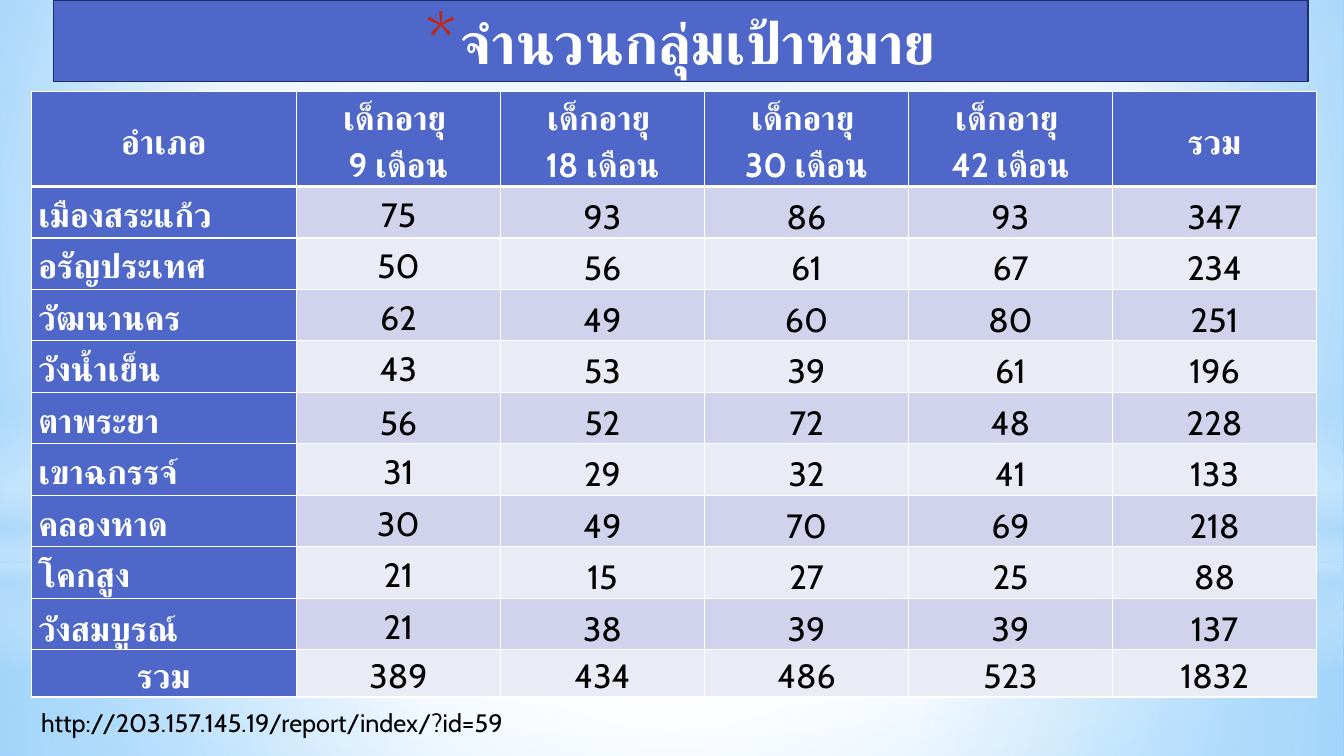
from lxml import etree
from pptx import Presentation
from pptx.dml.color import RGBColor
from pptx.enum.shapes import MSO_SHAPE
from pptx.enum.text import MSO_ANCHOR, PP_ALIGN
from pptx.oxml import parse_xml
from pptx.oxml.ns import nsdecls, qn
from pptx.util import Inches, Pt

RECT, OVAL = MSO_SHAPE.RECTANGLE, MSO_SHAPE.OVAL
MIDDLE, BOTTOM = MSO_ANCHOR.MIDDLE, MSO_ANCHOR.BOTTOM
LEFT, CENTER = PP_ALIGN.LEFT, PP_ALIGN.CENTER

FONT = "Cabin"
WHITE = RGBColor(0xFF, 0xFF, 0xFF)
BLACK = RGBColor(0, 0, 0)
BLUE = RGBColor(0x4E, 0x67, 0xC8)
NAVY = RGBColor(0x1F, 0x2E, 0x69)
RED = RGBColor(0xC3, 0x26, 0x0C)
BAND_DARK = RGBColor(0xD0, 0xD3, 0xEB)
BAND_LIGHT = RGBColor(0xE9, 0xEB, 0xF5)
SKY = RGBColor(0xB4, 0xDC, 0xFA)
SKY_PALE = RGBColor(0x9E, 0xD5, 0xFF)
SKY_DEEP = RGBColor(0x5B, 0xB9, 0xFF)

WIDTH, HEIGHT = 13.33, 7.5
TITLE = "จำนวนกลุ่มเป้าหมาย"
SOURCE = "http://203.157.145.19/report/index/?id=59"
TOTAL = "รวม"
AGES = (9, 18, 30, 42)
HEADER = ["อำเภอ", *(f"เด็กอายุ \n{age} เดือน" for age in AGES), TOTAL]
DISTRICTS = [
    ("เมืองสระแก้ว", 75, 93, 86, 93, 347),
    ("อรัญประเทศ", 50, 56, 61, 67, 234),
    ("วัฒนานคร", 62, 49, 60, 80, 251),
    ("วังน้ำเย็น", 43, 53, 39, 61, 196),
    ("ตาพระยา", 56, 52, 72, 48, 228),
    ("เขาฉกรรจ์", 31, 29, 32, 41, 133),
    ("คลองหาด", 30, 49, 70, 69, 218),
    ("โคกสูง", 21, 15, 27, 25, 88),
    ("วังสมบูรณ์", 21, 38, 39, 39, 137),
]
TOTALS = (TOTAL, 389, 434, 486, 523, 1832)
ROWS = [HEADER, *DISTRICTS, TOTALS]
LAST = len(ROWS) - 1
COLUMN_WIDTHS = [2.63] + [2.024] * 5
ROW_HEIGHTS = [0.94] + [0.511] * len(DISTRICTS) + [0.47]
LOW_CELLS = {(5, 1), (9, 0), (LAST, 1)}
RAISED_COLUMNS = (0, 1)

CENTERED = (50, 50, 50, 50)
BACKDROP = [(0, SKY_PALE, 100), (60, WHITE, 100), (100, SKY_DEEP, 100)]
GLOWS = [
    (RECT, 5.58, 1.92, [(0, WHITE, 91), (37, WHITE, 76), (100, SKY, 79)], CENTERED),
    (RECT, 0, 5.58, [(0, WHITE, 89), (48, WHITE, 62), (100, SKY, 79)], CENTERED),
    (RECT, 4.12, 2.5, [(0, WHITE, 0), (29, WHITE, 30), (45, SKY, 40),
                       (55, WHITE, 26), (65, SKY, 60), (100, WHITE, 0)], None),
    (OVAL, 1.75, 5.58, [(0, WHITE, 100), (56, WHITE, 0)], CENTERED),
]


def gradient(stops, focus):
    marks = "".join(
        f'<a:gs pos="{pos * 1000}"><a:srgbClr val="{color}">'
        f'<a:alpha val="{alpha * 1000}"/></a:srgbClr></a:gs>'
        for pos, color, alpha in stops)
    if focus:
        sides = " ".join(f'{side}="{share * 1000}"' for side, share in zip("ltrb", focus))
        course = f'<a:path path="circle"><a:fillToRect {sides}/></a:path>'
    else:
        course = '<a:lin ang="5400000" scaled="0"/>'
    return parse_xml(f'<a:gradFill {nsdecls("a")} rotWithShape="1">'
                     f'<a:gsLst>{marks}</a:gsLst>{course}</a:gradFill>')


def paint_backdrop(slide):
    slide.background.fill.solid()
    properties = slide.element.find(".//" + qn("p:bgPr"))
    properties.replace(properties[0], gradient(BACKDROP, (20, 10, 20, 60)))
    for outline, top, height, stops, focus in GLOWS:
        glow = slide.shapes.add_shape(outline, 0, Inches(top), Inches(WIDTH), Inches(height))
        glow.shadow.inherit = False
        glow.line.fill.background()
        glow.fill.solid()
        solid = glow.element.spPr.find(qn("a:solidFill"))
        glow.element.spPr.replace(solid, gradient(stops, focus))


def style(paragraph, size, color, bold=False, align=LEFT):
    paragraph.alignment = align
    for run in paragraph.runs:
        run.font.size, run.font.bold, run.font.name = Pt(size), bold, FONT
        run.font.color.rgb = color
        script = etree.SubElement(run.font._element, qn("a:cs"))
        script.set("typeface", FONT)


def add_title(slide):
    banner = slide.shapes.add_shape(RECT, Inches(0.53), 0, Inches(12.44), Inches(0.81))
    banner.shadow.inherit = False
    banner.fill.solid()
    banner.fill.fore_color.rgb = BLUE
    banner.line.color.rgb = NAVY
    banner.line.width = Pt(1.25)
    banner.text_frame.text = TITLE
    banner.text_frame.vertical_anchor = MIDDLE
    heading = banner.text_frame.paragraphs[0]
    style(heading, 41.4, WHITE, True, CENTER)
    properties = heading._p.get_or_add_pPr()
    properties.set("marL", str(Inches(0.35)))
    properties.set("indent", str(Inches(-0.35)))
    for bullet in (f'<a:buClr {nsdecls("a")}><a:srgbClr val="{RED}"/></a:buClr>',
                   f'<a:buSzPct {nsdecls("a")} val="128000"/>',
                   f'<a:buFont {nsdecls("a")} typeface="{FONT}"/>',
                   f'<a:buChar {nsdecls("a")} char="*"/>'):
        properties.append(parse_xml(bullet))


def add_borders(cell, row):
    weights = {"L": 1, "R": 1, "T": 3 if row == 1 else 1, "B": 3 if row == 0 else 1}
    for place, (side, weight) in enumerate(weights.items()):
        cell._tc.get_or_add_tcPr().insert(place, parse_xml(
            f'<a:ln{side} {nsdecls("a")} w="{Pt(weight)}"><a:solidFill>'
            f'<a:srgbClr val="{WHITE}"/></a:solidFill></a:ln{side}>'))


def fill_cell(cell, row, column, content):
    titled = row == 0 or column == 0
    raised = row == 0 or column in RAISED_COLUMNS
    cell.margin_left = cell.margin_right = Inches(0.07)
    cell.margin_top = cell.margin_bottom = 0
    cell.vertical_anchor = MIDDLE if raised and (row, column) not in LOW_CELLS else BOTTOM
    cell.fill.solid()
    cell.fill.fore_color.rgb = BLUE if titled else BAND_DARK if row % 2 else BAND_LIGHT
    add_borders(cell, row)
    cell.text_frame.text = str(content)
    align = LEFT if column == 0 and 0 < row < LAST else CENTER
    for paragraph in cell.text_frame.paragraphs:
        paragraph.line_spacing = 1.15
        style(paragraph, 24, WHITE if titled else BLACK, titled, align)


def add_targets(slide):
    targets = slide.shapes.add_table(
        len(ROWS), len(HEADER), Inches(0.31), Inches(0.91),
        Inches(sum(COLUMN_WIDTHS)), Inches(sum(ROW_HEIGHTS))).table
    for column, width in zip(targets.columns, COLUMN_WIDTHS):
        column.width = Inches(width)
    for row, height in zip(targets.rows, ROW_HEIGHTS):
        row.height = Inches(height)
    for row, entries in enumerate(ROWS):
        for column, content in enumerate(entries):
            fill_cell(targets.cell(row, column), row, column, content)


def add_source(slide):
    source = slide.shapes.add_textbox(Inches(0.31), Inches(6.97), Inches(6.73), Inches(0.4))
    source.text_frame.word_wrap = True
    source.text_frame.text = SOURCE
    style(source.text_frame.paragraphs[0], 18, BLACK)


def main():
    """Build the slide of child screening targets by district."""
    deck = Presentation()
    deck.slide_width, deck.slide_height = Inches(WIDTH), Inches(HEIGHT)
    slide = deck.slides.add_slide(deck.slide_layouts[6])
    paint_backdrop(slide)
    add_title(slide)
    add_targets(slide)
    add_source(slide)
    deck.save("out.pptx")


if __name__ == "__main__":
    main()
